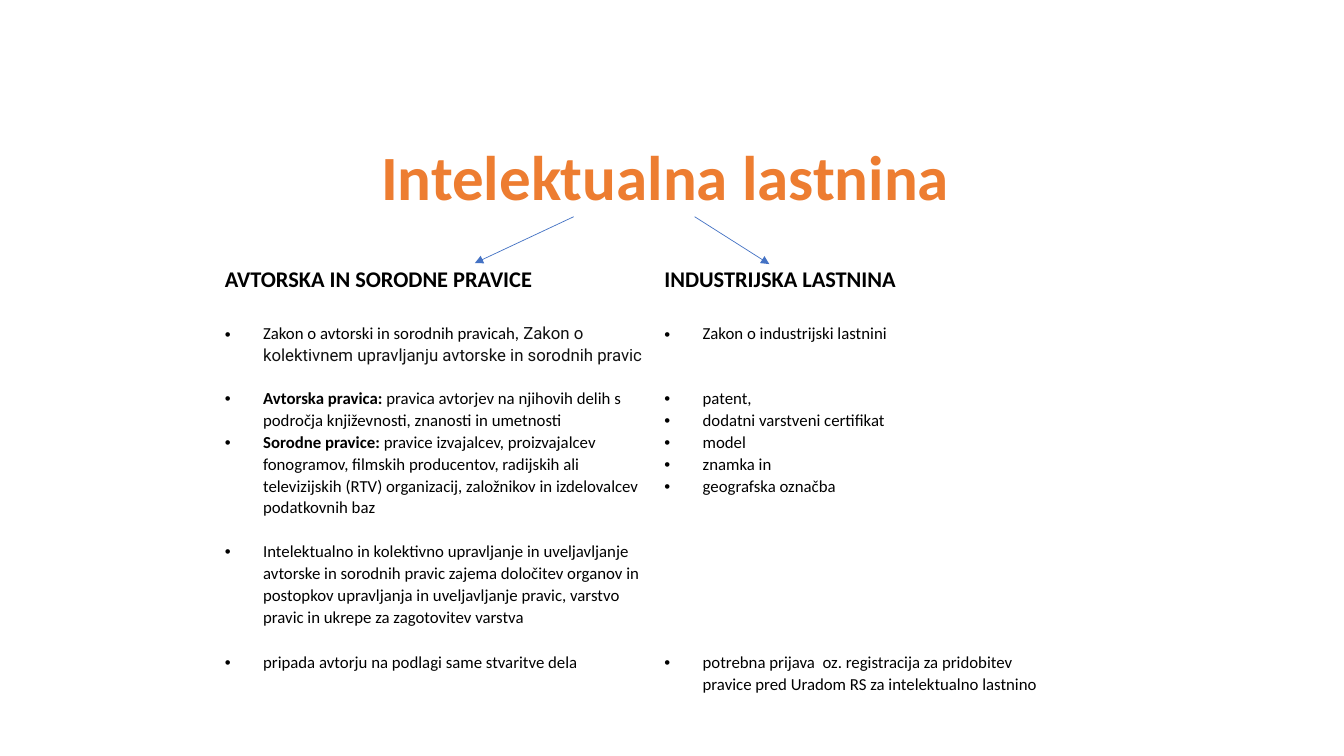
from lxml import etree
from pptx import Presentation
from pptx.dml.color import RGBColor
from pptx.enum.shapes import MSO_CONNECTOR
from pptx.enum.text import MSO_ANCHOR, PP_ALIGN
from pptx.oxml.ns import qn
from pptx.util import Inches, Pt

STRAIGHT = MSO_CONNECTOR.STRAIGHT
TOP, MIDDLE = MSO_ANCHOR.TOP, MSO_ANCHOR.MIDDLE
CENTER = PP_ALIGN.CENTER

COLORS = {"title": "ED7D31", "text": "000000", "law": "111111", "line": "4472C4"}
STYLES = {
    "title": {"size": Pt(45), "name": "Calibri", "bold": True},
    "head": {"size": Pt(16), "name": "Calibri", "bold": True},
    "body": {"size": Pt(12), "name": "Calibri", "bold": False},
    "term": {"size": Pt(12), "name": "Calibri", "bold": True},
    "law": {"size": Pt(12), "name": "Roboto", "bold": False},
}
TINTS = {"title": "title", "law": "law"}
INDENT = Inches(0.38)
GAP = Pt(15.7)

# Each cell is a list of paragraphs: (space before, [(style, text), ...])
HEADS = ["AVTORSKA IN SORODNE PRAVICE", "INDUSTRIJSKA LASTNINA"]
LAWS = [
    [(0, [("body", "Zakon o avtorski in sorodnih pravicah, "),
          ("law", "Zakon o kolektivnem upravljanju avtorske in sorodnih pravic")])],
    [(0, [("body", "Zakon o industrijski lastnini")])],
]
RIGHTS = [
    [(0, [("term", "Avtorska pravica: "),
          ("body", "pravica avtorjev na njihovih delih s področja književnosti, "
                   "znanosti in umetnosti")]),
     (0, [("term", "Sorodne pravice: "),
          ("body", "pravice izvajalcev, proizvajalcev fonogramov, filmskih producentov, "
                   "radijskih ali televizijskih (RTV) organizacij, založnikov in "
                   "izdelovalcev podatkovnih baz")]),
     (GAP, [("body", "Intelektualno in kolektivno upravljanje in uveljavljanje avtorske "
                     "in sorodnih pravic zajema določitev organov in postopkov "
                     "upravljanja in uveljavljanje pravic, varstvo pravic in ukrepe za "
                     "zagotovitev varstva")])],
    [(0, [("body", item)]) for item in
     ["patent,", "dodatni varstveni certifikat", "model", "znamka in",
      "geografska označba"]],
]
CLAIMS = [
    [(0, [("body", "pripada avtorju na podlagi same stvaritve dela")])],
    [(0, [("body", "potrebna prijava  oz. registracija za pridobitev pravice pred "
                   "Uradom RS za intelektualno lastnino")])],
]
ROWS = [[[(0, [("head", text)])] for text in HEADS], LAWS, RIGHTS, CLAIMS]
WIDTHS = [4.36, 3.85]
HEIGHTS = [0.58, 0.64, 2.62, 0.44]


def add_run(para, style, text):
    run = para.add_run()
    run.text = text
    for key, value in STYLES[style].items():
        setattr(run.font, key, value)
    run.font.color.rgb = RGBColor.from_string(COLORS[TINTS.get(style, "text")])


def add_bullet(para):
    props = para._p.get_or_add_pPr()
    props.set("marL", str(INDENT))
    props.set("indent", str(-INDENT))
    etree.SubElement(props, qn("a:buFont"), typeface="Arial")
    etree.SubElement(props, qn("a:buChar"), char="•")


def fill_cell(cell, paras, bullet):
    cell.fill.background()
    form = {"margin_left": Inches(0.07), "margin_right": Inches(0.07),
            "margin_top": 0, "margin_bottom": 0, "vertical_anchor": TOP}
    for key, value in form.items():
        setattr(cell, key, value)
    frame = cell.text_frame
    for i, (space, runs) in enumerate(paras):
        para = frame.add_paragraph() if i else frame.paragraphs[0]
        if bullet:
            add_bullet(para)
        para.line_spacing = 1.07
        para.space_before = space
        for style, text in runs:
            add_run(para, style, text)


def add_title(slide, left, top, width, height):
    box = slide.shapes.add_textbox(*map(Inches, (left, top, width, height)))
    frame = box.text_frame
    frame.word_wrap = True
    frame.vertical_anchor = MIDDLE
    para = frame.paragraphs[0]
    para.alignment = CENTER
    para.line_spacing = 0.9
    add_run(para, "title", "Intelektualna lastnina ")


def add_grid(slide, left, top):
    size = (left, top, sum(WIDTHS), sum(HEIGHTS))
    table = slide.shapes.add_table(len(ROWS), len(WIDTHS), *map(Inches, size)).table
    table.first_row = table.horz_banding = False
    for col, width in zip(table.columns, WIDTHS):
        col.width = Inches(width)
    for r, (height, cells) in enumerate(zip(HEIGHTS, ROWS)):
        table.rows[r].height = Inches(height)
        for c, paras in enumerate(cells):
            fill_cell(table.cell(r, c), paras, r > 0)


def add_arrow(slide, *ends):
    link = slide.shapes.add_connector(STRAIGHT, *map(Inches, ends))
    link.line.color.rgb = RGBColor.from_string(COLORS["line"])
    link.line.width = Pt(0.5)
    etree.SubElement(link.line._get_or_add_ln(), qn("a:tailEnd"), type="triangle")
    etree.SubElement(link._element.spPr, qn("a:effectLst"))


def main():
    deck = Presentation()
    deck.slide_width, deck.slide_height = Inches(13.33), Inches(7.5)
    slide = deck.slides.add_slide(deck.slide_layouts[6])
    add_title(slide, 0.92, 1.27, 11.5, 1.03)
    add_grid(slide, 2.16, 2.62)
    add_arrow(slide, 5.69, 2.15, 4.71, 2.61)
    add_arrow(slide, 6.89, 2.15, 7.63, 2.62)
    deck.save("out.pptx")


if __name__ == "__main__":
    main()
